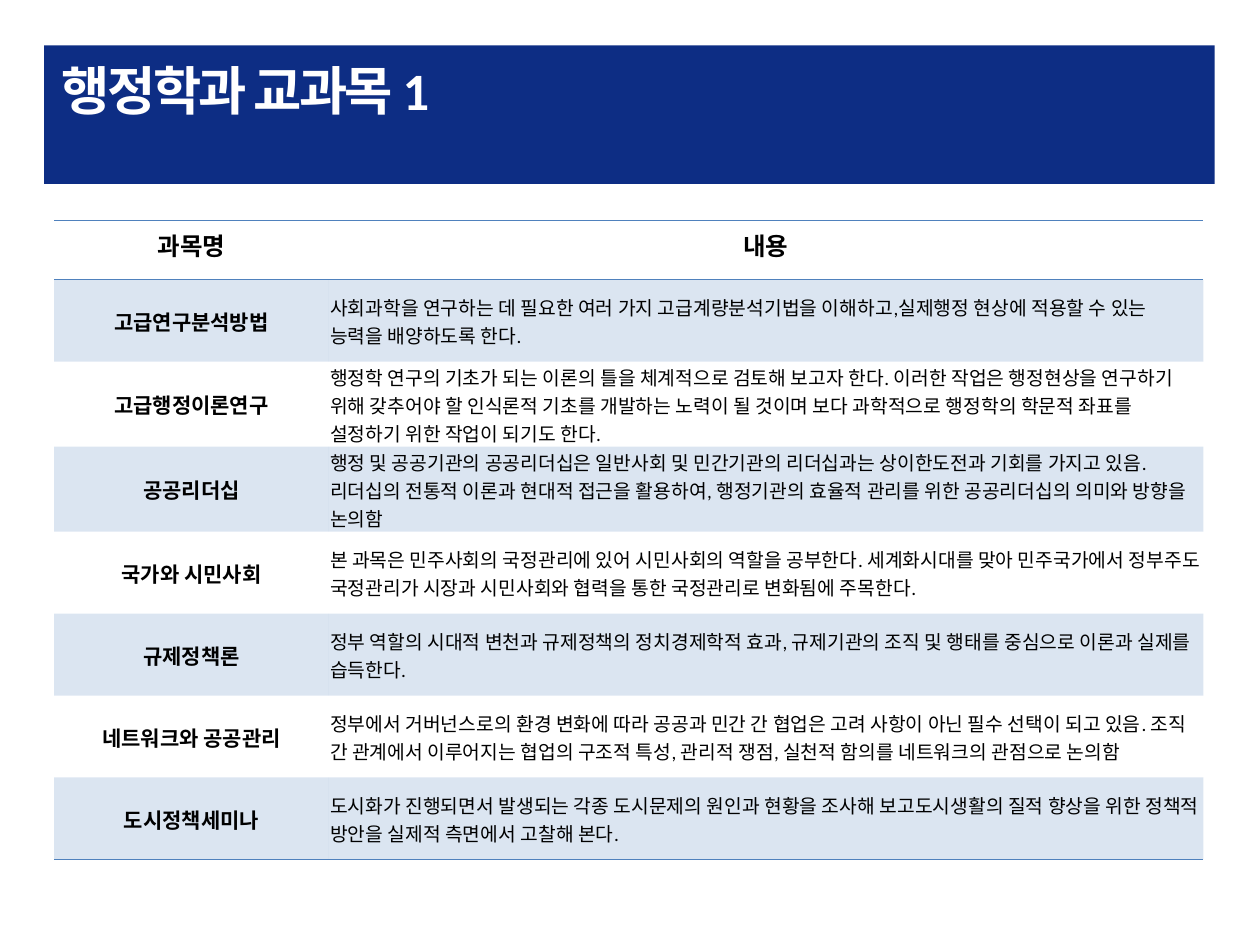
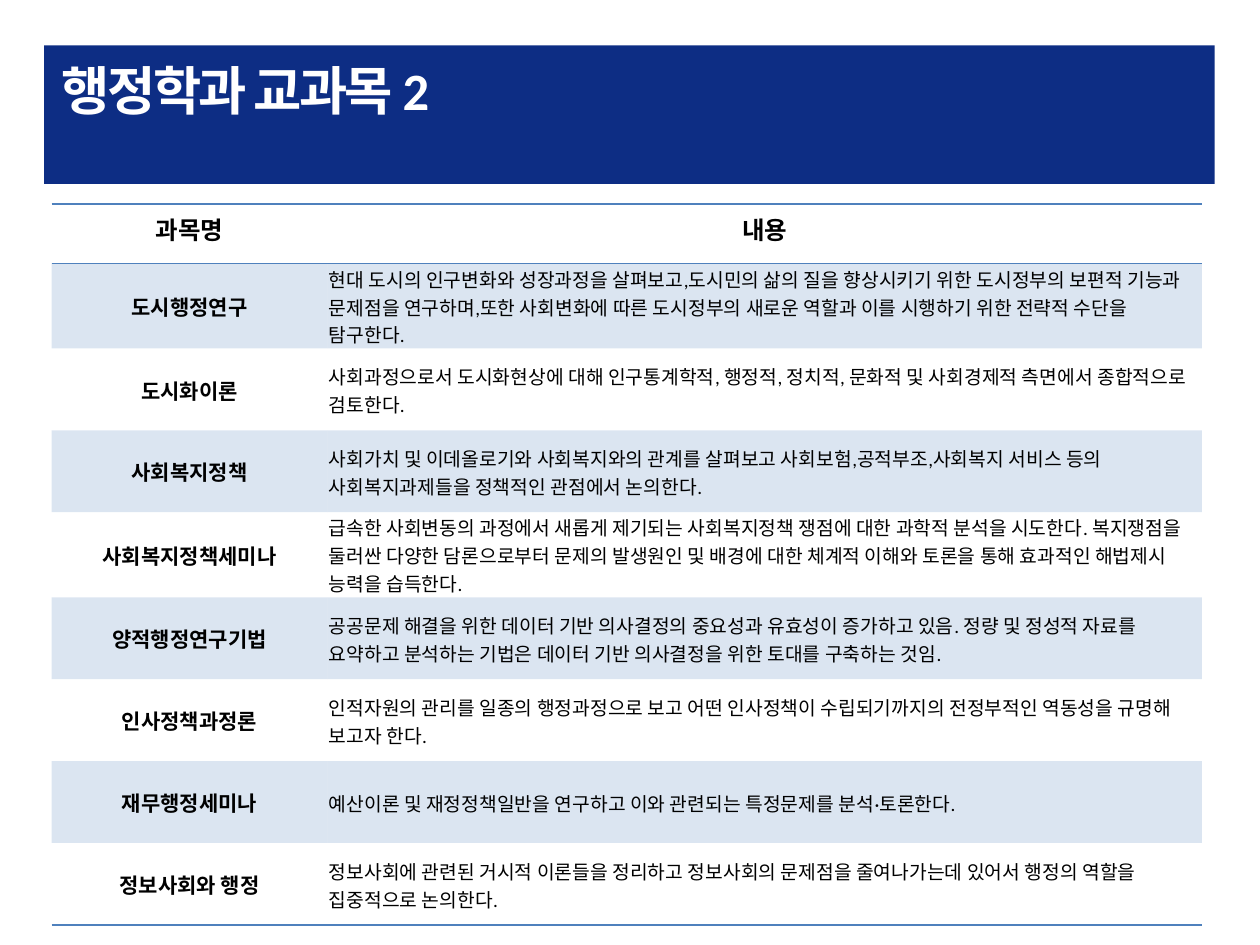
from lxml import etree
from pptx import Presentation
from pptx.dml.color import RGBColor
from pptx.enum.shapes import MSO_SHAPE
from pptx.enum.text import MSO_ANCHOR, MSO_AUTO_SIZE, PP_ALIGN
from pptx.oxml.ns import qn
from pptx.util import Pt

PX = 9144
RECT = MSO_SHAPE.RECTANGLE
TOP, MIDDLE = MSO_ANCHOR.TOP, MSO_ANCHOR.MIDDLE
LEFT, CENTER = PP_ALIGN.LEFT, PP_ALIGN.CENTER
NO_FIT = MSO_AUTO_SIZE.NONE
NAVY = RGBColor(0x0D, 0x2D, 0x84)
BLUE = RGBColor(0x4F, 0x81, 0xBD)
WHITE = RGBColor(0xFF, 0xFF, 0xFF)
BLACK = RGBColor(0x00, 0x00, 0x00)
FONT = "Calibri"
PLAIN_TABLE = "{2D5ABB26-0587-4C30-8999-92F81FD0307C}"
HEADER_H, ROW_H = 47, 65
HEADER = ("과목명", "내용")

COURSES_1 = [
    ("고급연구분석방법",
     "사회과학을 연구하는 데 필요한 여러 가지 고급계량분석기법을 이해하고,실제행정 현상에 적용할 수 있는 "
     "능력을 배양하도록 한다."),
    ("고급행정이론연구",
     "행정학 연구의 기초가 되는 이론의 틀을 체계적으로 검토해 보고자 한다. 이러한 작업은 행정현상을 연구하기 "
     "위해 갖추어야 할 인식론적 기초를 개발하는 노력이 될 것이며 보다 과학적으로 행정학의 학문적 좌표를 "
     "설정하기 위한 작업이 되기도 한다."),
    ("공공리더십",
     "행정 및 공공기관의 공공리더십은 일반사회 및 민간기관의 리더십과는 상이한도전과 기회를 가지고 있음. "
     "리더십의 전통적 이론과 현대적 접근을 활용하여, 행정기관의 효율적 관리를 위한 공공리더십의 의미와 "
     "방향을 논의함"),
    ("국가와 시민사회",
     "본 과목은 민주사회의 국정관리에 있어 시민사회의 역할을 공부한다. 세계화시대를 맞아 민주국가에서 "
     "정부주도 국정관리가 시장과 시민사회와 협력을 통한 국정관리로 변화됨에 주목한다."),
    ("규제정책론",
     "정부 역할의 시대적 변천과 규제정책의 정치경제학적 효과, 규제기관의 조직 및 행태를 중심으로 이론과 "
     "실제를 습득한다."),
    ("네트워크와 공공관리",
     "정부에서 거버넌스로의 환경 변화에 따라 공공과 민간 간 협업은 고려 사항이 아닌 필수 선택이 되고 있음. "
     "조직 간 관계에서 이루어지는 협업의 구조적 특성, 관리적 쟁점, 실천적 함의를 네트워크의 관점으로 논의함"),
    ("도시정책세미나",
     "도시화가 진행되면서 발생되는 각종 도시문제의 원인과 현황을 조사해 보고도시생활의 질적 향상을 위한 "
     "정책적 방안을 실제적 측면에서 고찰해 본다."),
]
COURSES_2 = [
    ("도시행정연구",
     "현대 도시의 인구변화와 성장과정을 살펴보고,도시민의 삶의 질을 향상시키기 위한 도시정부의 보편적 "
     "기능과 문제점을 연구하며,또한 사회변화에 따른 도시정부의 새로운 역할과 이를 시행하기 위한 전략적 "
     "수단을 탐구한다."),
    ("도시화이론",
     "사회과정으로서 도시화현상에 대해 인구통계학적, 행정적, 정치적, 문화적 및 사회경제적 측면에서 "
     "종합적으로 검토한다."),
    ("사회복지정책",
     "사회가치 및 이데올로기와 사회복지와의 관계를 살펴보고 사회보험,공적부조,사회복지 서비스 등의 "
     "사회복지과제들을 정책적인 관점에서 논의한다."),
    ("사회복지정책세미나",
     "급속한 사회변동의 과정에서 새롭게 제기되는 사회복지정책 쟁점에 대한 과학적 분석을 시도한다. "
     "복지쟁점을 둘러싼 다양한 담론으로부터 문제의 발생원인 및 배경에 대한 체계적 이해와 토론을 통해 효과적인 "
     "해법제시 능력을 습득한다."),
    ("양적행정연구기법",
     "공공문제 해결을 위한 데이터 기반 의사결정의 중요성과 유효성이 증가하고 있음. 정량 및 정성적 자료를 "
     "요약하고 분석하는 기법은 데이터 기반 의사결정을 위한 토대를 구축하는 것임."),
    ("인사정책과정론",
     "인적자원의 관리를 일종의 행정과정으로 보고 어떤 인사정책이 수립되기까지의 전정부적인 역동성을 규명해 "
     "보고자 한다."),
    ("재무행정세미나",
     "예산이론 및 재정정책일반을 연구하고 이와 관련되는 특정문제를 분석·토론한다."),
    ("정보사회와 행정",
     "정보사회에 관련된 거시적 이론들을 정리하고 정보사회의 문제점을 줄여나가는데 있어서 행정의 역할을 "
     "집중적으로 논의한다."),
]
SLIDES = [
    ("행정학과 교과목 1", 43, 175, (218, 694), COURSES_1),
    ("행정학과 교과목 2", 41, 162, (219, 694), COURSES_2),
]


def write(tf, text, size=11, bold=False, color=BLACK, align=LEFT, spacing=None):
    p = tf.paragraphs[0]
    p.alignment = align
    r = p.add_run()
    r.text = text
    r.font.name = FONT
    r.font.size = Pt(size)
    r.font.bold = bold
    r.font.color.rgb = color
    if spacing is not None:
        r.font._element.set("spc", str(spacing))


def add_border(cell, side):
    ln = etree.SubElement(cell._tc.get_or_add_tcPr(), qn("a:" + side), w=str(Pt(1)))
    fill = etree.SubElement(ln, qn("a:solidFill"))
    etree.SubElement(fill, qn("a:srgbClr"), val=str(BLUE))


prs = Presentation()
prs.slide_width = 1000 * PX
prs.slide_height = 750 * PX

for title, left, top, widths, courses in SLIDES:
    s = prs.slides.add_slide(prs.slide_layouts[5])

    band = s.shapes.add_shape(RECT, 35 * PX, 36 * PX, 929 * PX, 110 * PX)
    band.shadow.inherit = False
    band.fill.solid()
    band.fill.fore_color.rgb = NAVY
    band.line.fill.background()
    s.shapes._spTree.insert(2, band._element)

    sp = s.shapes.title
    sp.left, sp.top, sp.width, sp.height = 39 * PX, 41 * PX, 918 * PX, 106 * PX
    tf = sp.text_frame
    tf.auto_size = NO_FIT
    tf.vertical_anchor = TOP
    write(tf, title, size=30, bold=True, color=WHITE, spacing=-150)

    rows = [HEADER] + courses
    height = HEADER_H + ROW_H * len(courses)
    frame = s.shapes.add_table(len(rows), 2, left * PX, top * PX, sum(widths) * PX, height * PX)
    table = frame.table
    table.first_row = table.horz_banding = False
    table._tbl.tblPr.find(qn("a:tableStyleId")).text = PLAIN_TABLE
    for column, width in zip(table.columns, widths):
        column.width = width * PX

    for i, row in enumerate(rows):
        table.rows[i].height = (ROW_H if i else HEADER_H) * PX
        for j, text in enumerate(row):
            cell = table.cell(i, j)
            if i == 0:
                add_border(cell, "lnT")
                write(cell.text_frame, text, size=14, bold=True, align=CENTER)
            else:
                cell.vertical_anchor = MIDDLE
                cell.margin_left = cell.margin_right = cell.margin_top = PX
                cell.margin_bottom = 0
                if j == 0:
                    write(cell.text_frame, text, size=12, bold=True, align=CENTER)
                else:
                    write(cell.text_frame, text)
            if i in (0, len(courses)):
                add_border(cell, "lnB")
            if i % 2:
                cell.fill.solid()
                cell.fill.fore_color.rgb = BLUE
                tint = cell._tc.tcPr.find(qn("a:solidFill"))[0]
                etree.SubElement(tint, qn("a:alpha"), val="20000")
            else:
                cell.fill.background()

prs.save("out.pptx")
